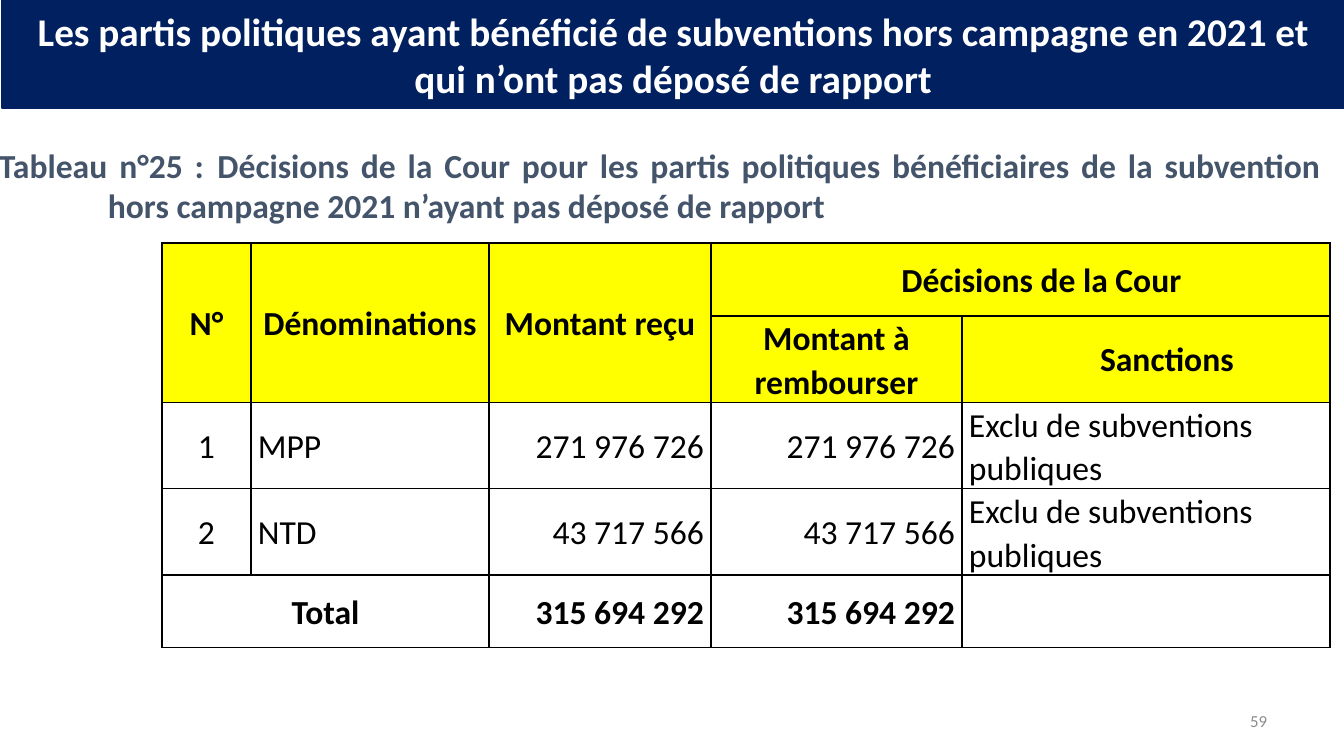
from dataclasses import dataclass

import lxml.etree
import pptx
import pptx.dml.color
import pptx.enum.text
import pptx.oxml.ns
import pptx.util

PX = 914400 / 100.8
FONT = "Calibri"
LEFT = pptx.enum.text.PP_ALIGN.LEFT
CENTER = pptx.enum.text.PP_ALIGN.CENTER
RIGHT = pptx.enum.text.PP_ALIGN.RIGHT
JUSTIFY = pptx.enum.text.PP_ALIGN.JUSTIFY
MIDDLE = pptx.enum.text.MSO_ANCHOR.MIDDLE
BLACK, NAVY, YELLOW = "000000", "002060", "FFFF00"
COLUMNS = (89, 238, 222, 251, 368)
ROW_HEIGHT = 73


@dataclass(frozen=True)
class Entry:
    row: int
    col: int
    text: str
    align: pptx.enum.text.PP_ALIGN = CENTER
    bold: bool = False
    indent: int = 0
    row_span: int = 1
    col_span: int = 1


HEADINGS = (
    Entry(0, 0, "N°", bold=True, row_span=2),
    Entry(0, 1, "Dénominations", bold=True, row_span=2),
    Entry(0, 2, "Montant reçu", bold=True, row_span=2),
    Entry(0, 3, "Décisions de la Cour", bold=True, indent=42, col_span=2),
    Entry(1, 3, "Montant à rembourser", bold=True),
    Entry(1, 4, "Sanctions", bold=True, indent=42),
)
PARTIES = (("MPP", "271 976 726", 0), ("NTD", "43 717 566", 33))
TOTAL = "315 694 292"


def px(n: int) -> pptx.util.Emu:
    return pptx.util.Emu(round(n * PX))


def rgb(value: str) -> pptx.dml.color.RGBColor:
    return pptx.dml.color.RGBColor.from_string(value)


def box(left: int, top: int, width: int, height: int) -> tuple:
    return px(left), px(top), px(width), px(height)


def write(tf, text: str, size: int, color: str, align, bold: bool = False):
    p = tf.paragraphs[0]
    p.text = text
    p.alignment = align
    p.font.name = FONT
    p.font.size = pptx.util.Pt(size)
    p.font.bold = bold
    p.font.color.rgb = rgb(color)
    return p


def set_indent(p, first: int, margin: int = 0) -> None:
    pPr = p._p.get_or_add_pPr()
    pPr.set("marL", str(px(margin)))
    pPr.set("indent", str(px(first)))


def add_borders(cell) -> None:
    tcPr = cell._tc.get_or_add_tcPr()
    qn = pptx.oxml.ns.qn
    for i, side in enumerate(("lnL", "lnR", "lnT", "lnB")):
        ln = lxml.etree.Element(qn(f"a:{side}"), w=str(pptx.util.Pt(1)))
        fill = lxml.etree.SubElement(ln, qn("a:solidFill"))
        lxml.etree.SubElement(fill, qn("a:srgbClr"), val=BLACK)
        tcPr.insert(i, ln)


def party_entries() -> list[Entry]:
    entries = []
    for i, (name, amount, indent) in enumerate(PARTIES):
        row = i + 2
        entries += [
            Entry(row, 0, str(i + 1)),
            Entry(row, 1, name, LEFT),
            Entry(row, 2, amount, RIGHT),
            Entry(row, 3, amount, RIGHT, indent=indent),
            Entry(row, 4, "Exclu de subventions publiques", LEFT),
        ]
    return entries


def add_title(slide) -> None:
    sp = slide.shapes.title
    sp.left, sp.top, sp.width, sp.height = box(2, 0, 1342, 108)
    sp.fill.solid()
    sp.fill.fore_color.rgb = rgb(NAVY)
    sp.line.color.rgb = rgb(NAVY)
    sp.line.width = pptx.util.Pt(2)
    tf = sp.text_frame
    tf.auto_size = pptx.enum.text.MSO_AUTO_SIZE.NONE
    tf.vertical_anchor = MIDDLE
    write(tf, "Les partis politiques ayant bénéficié de subventions hors campagne "
          "en 2021 et qui n’ont pas déposé de rapport", 28, "FFFFFF", CENTER, True)


def add_caption(slide) -> None:
    tf = slide.shapes.add_textbox(*box(-11, 140, 1342, 92)).text_frame
    tf.word_wrap = True
    tf.auto_size = pptx.enum.text.MSO_AUTO_SIZE.SHAPE_TO_FIT_TEXT
    p = write(tf, "Tableau n°25 :\tDécisions de la Cour pour les partis politiques "
              "bénéficiaires de la subvention hors campagne 2021 n’ayant pas déposé "
              "de rapport", 24, "44546A", JUSTIFY, True)
    set_indent(p, -109, 109)


def add_decisions(slide) -> None:
    rows = len(PARTIES) + 3
    frame = slide.shapes.add_table(
        rows, len(COLUMNS), *box(162, 243, sum(COLUMNS), rows * ROW_HEIGHT))
    table = frame.table
    table.first_row = table.horz_banding = False
    for column, width in zip(table.columns, COLUMNS):
        column.width = px(width)
    for i, row in enumerate(table.rows):
        row.height = px(ROW_HEIGHT)
        for cell in row.cells:
            if i < 2:
                cell.fill.solid()
                cell.fill.fore_color.rgb = rgb(YELLOW)
            else:
                cell.fill.background()
            add_borders(cell)
    last = rows - 1
    totals = [Entry(last, 0, "Total", bold=True, col_span=2)]
    totals += [Entry(last, col, TOTAL, RIGHT, True) for col in (2, 3)]
    for e in (*HEADINGS, *party_entries(), *totals):
        cell = table.cell(e.row, e.col)
        if e.row_span > 1 or e.col_span > 1:
            cell.merge(table.cell(e.row + e.row_span - 1, e.col + e.col_span - 1))
        cell.vertical_anchor = MIDDLE
        cell.margin_left = cell.margin_right = px(7)
        cell.margin_top = cell.margin_bottom = 0
        p = write(cell.text_frame, e.text, 24, BLACK, e.align, e.bold)
        p.line_spacing = 1.07
        if e.indent:
            set_indent(p, e.indent)


def add_page_number(slide) -> None:
    tf = slide.shapes.add_textbox(*box(964, 701, 313, 40)).text_frame
    tf.word_wrap = True
    tf.vertical_anchor = MIDDLE
    write(tf, "59", 12, "8C8C8C", RIGHT)


def main() -> None:
    prs = pptx.Presentation()
    prs.slide_width, prs.slide_height = px(1344), px(756)
    slide = prs.slides.add_slide(prs.slide_layouts[5])
    add_title(slide)
    add_page_number(slide)
    add_caption(slide)
    add_decisions(slide)
    prs.save("out.pptx")


if __name__ == "__main__":
    main()
